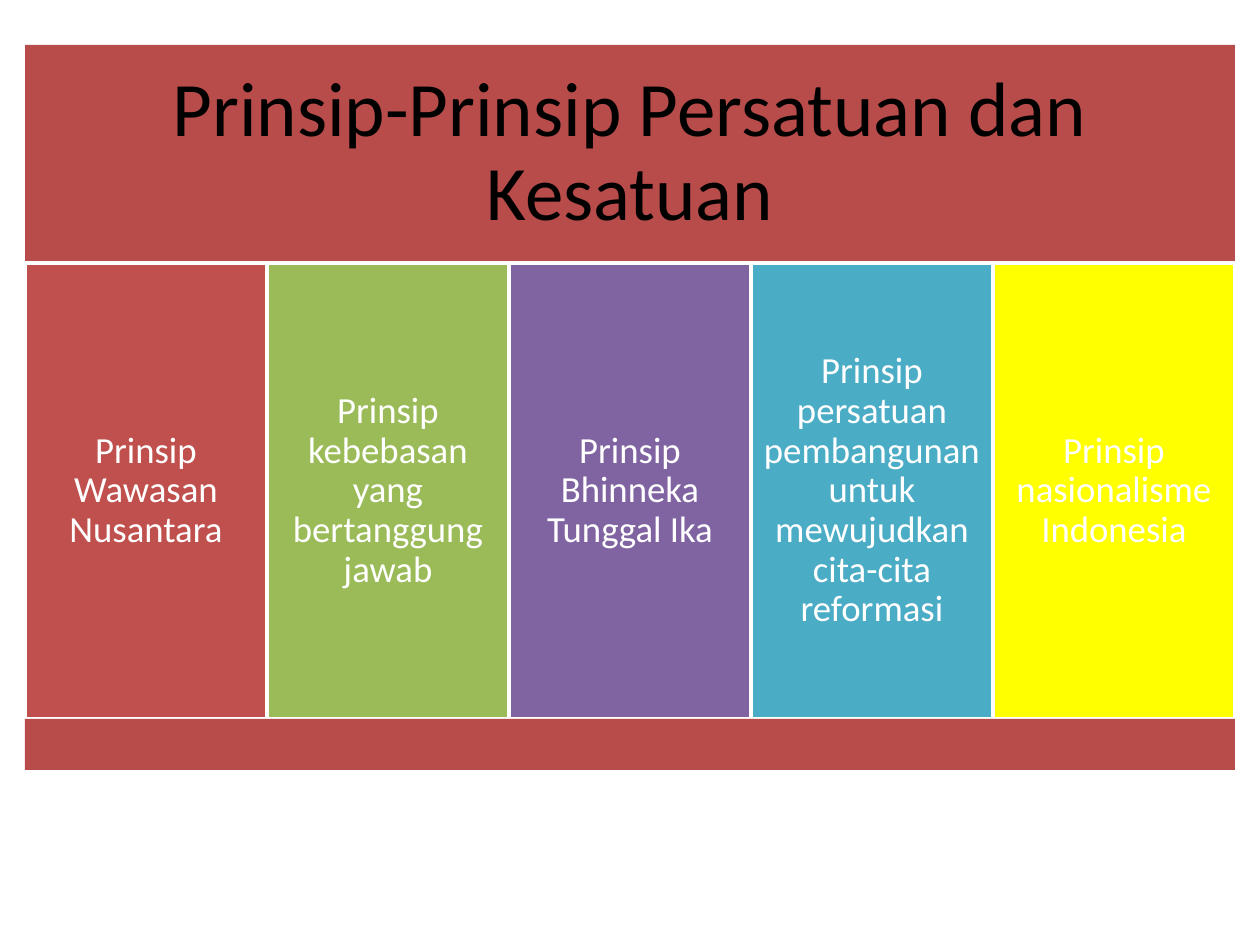
from pptx import Presentation
from pptx.dml.color import RGBColor
from pptx.enum.shapes import MSO_SHAPE
from pptx.enum.text import MSO_ANCHOR, MSO_AUTO_SIZE, PP_ALIGN
from pptx.util import Emu, Pt

PX = 914400 // 126
COLORS = {
    "band": "B74C4A",
    "red": "C0504D",
    "green": "9BBB59",
    "purple": "8064A2",
    "teal": "4BACC6",
    "yellow": "FFFF00",
    "white": "FFFFFF",
    "black": "000000",
}
PRINCIPLES = [
    ("Prinsip Wawasan Nusantara", "red"),
    ("Prinsip kebebasan yang bertanggung jawab", "green"),
    ("Prinsip Bhinneka Tunggal Ika", "purple"),
    ("Prinsip persatuan pembangunan untuk mewujudkan cita-cita reformasi", "teal"),
    ("Prinsip nasionalisme Indonesia", "yellow"),
]


def px(n):
    return Emu(n * PX)


def rgb(name):
    return RGBColor.from_string(COLORS[name])


def fill_shape(sp, color):
    sp.fill.solid()
    sp.fill.fore_color.rgb = rgb(color)


def add_rect(slide, x, y, w, h, color):
    sp = slide.shapes.add_shape(MSO_SHAPE.RECTANGLE, px(x), px(y), px(w), px(h))
    sp.shadow.inherit = False
    fill_shape(sp, color)
    sp.line.fill.background()
    return sp


def write_text(sp, text, size, color, inset):
    tf = sp.text_frame
    tf.text = text
    tf.word_wrap = True
    tf.auto_size = MSO_AUTO_SIZE.NONE
    tf.vertical_anchor = MSO_ANCHOR.MIDDLE
    tf.margin_left = tf.margin_right = tf.margin_top = tf.margin_bottom = px(inset)
    p = tf.paragraphs[0]
    p.alignment = PP_ALIGN.CENTER
    p.line_spacing = 0.9
    font = p.runs[0].font
    font.name = "Calibri"
    font.size = Pt(size)
    font.color.rgb = rgb(color)


def add_header(slide, x, y, w, h):
    title = slide.shapes.title
    title.left, title.top, title.width, title.height = px(x), px(y), px(w), px(h)
    fill_shape(title, "band")
    write_text(title, "Prinsip-Prinsip Persatuan dan Kesatuan", 44, "black", 23)


def add_columns(slide, x, y, w, h):
    col_w = w // len(PRINCIPLES)
    for i, (text, color) in enumerate(PRINCIPLES):
        sp = add_rect(slide, x + i * col_w, y, col_w, h, color)
        sp.line.color.rgb = rgb("white")
        sp.line.width = Pt(2)
        write_text(sp, text, 21, "white", 11)


def main():
    prs = Presentation()
    prs.slide_width, prs.slide_height = px(1260), px(945)
    slide = prs.slides.add_slide(prs.slide_layouts[5])
    add_header(slide, 25, 45, 1210, 217)
    add_columns(slide, 25, 263, 1210, 456)
    add_rect(slide, 25, 719, 1210, 51, "band")
    prs.save("out.pptx")


if __name__ == "__main__":
    main()
